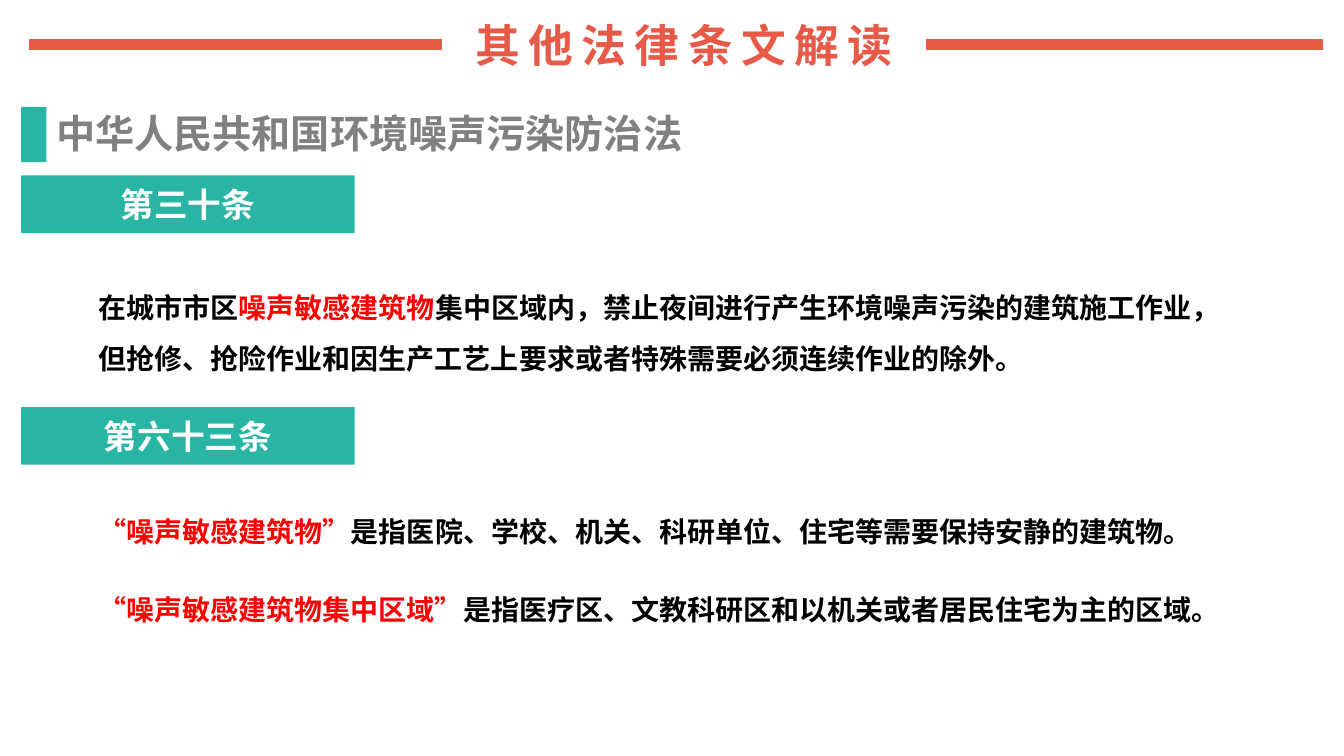
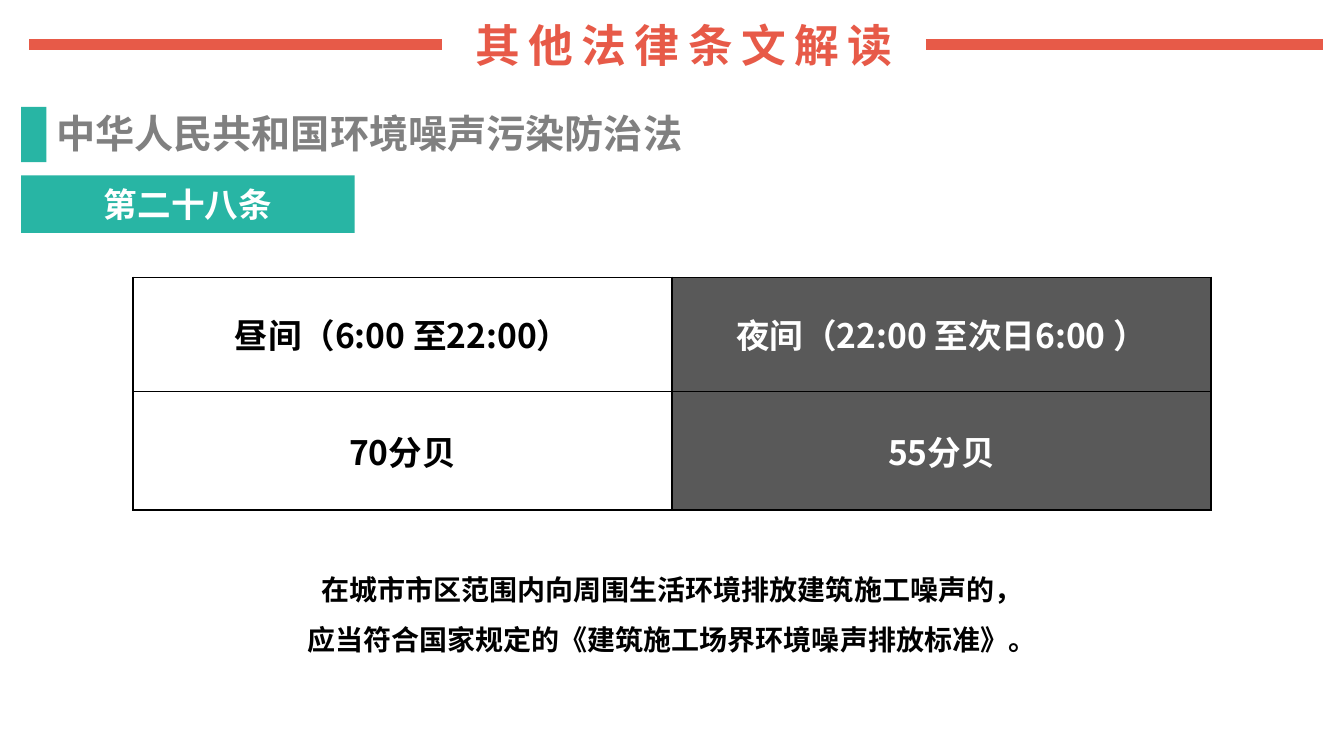
from dataclasses import dataclass

import lxml.etree
import pptx
import pptx.dml.color
import pptx.enum.shapes
import pptx.enum.text
import pptx.oxml.ns
import pptx.util
from pptx.util import Inches

ALIGN = pptx.enum.text.PP_ALIGN
ANCHOR = pptx.enum.text.MSO_ANCHOR


@dataclass(frozen=True)
class Theme:
    font: str = "Noto Sans CJK SC"
    coral: str = "E75A48"
    teal: str = "28B5A4"
    gray: str = "808080"
    dark: str = "595959"
    red: str = "FF0000"
    black: str = "000000"
    white: str = "FFFFFF"
    title: int = 32
    heading: int = 28
    label: int = 24
    body: int = 20
    rule: float = 8.25
    border: float = 1


THEME = Theme()
TITLE = "其他法律条文解读"
LAW = "中华人民共和国环境噪声污染防治法"
LEFT = 0.21
BODY_LEFT = 0.88


def rgb(color):
    return pptx.dml.color.RGBColor.from_string(color)


def sub(parent, tag, **attrs):
    return lxml.etree.SubElement(parent, pptx.oxml.ns.qn(tag), attrs)


# Text
def style_run(r, size, color, spacing=0):
    r.font.name = THEME.font
    r.font.size = pptx.util.Pt(size)
    r.font.bold = True
    r.font.color.rgb = rgb(color)
    rPr = r._r.get_or_add_rPr()
    sub(rPr, "a:ea", typeface=THEME.font)
    if spacing:
        rPr.set("spc", str(spacing * 100))


def fill_text(tf, paragraphs, size, align=ALIGN.LEFT, line_spacing=None, spacing=0):
    """Each paragraph is a list of (text, color) runs."""
    for i, runs in enumerate(paragraphs):
        p = tf.add_paragraph() if i else tf.paragraphs[0]
        p.alignment = align
        p.line_spacing = line_spacing
        for text, color in runs:
            r = p.add_run()
            r.text = text
            style_run(r, size, color, spacing)


def add_text(s, x, y, w, h, paragraphs, size, anchor=ANCHOR.TOP, **options):
    tf = s.shapes.add_textbox(Inches(x), Inches(y), Inches(w), Inches(h)).text_frame
    tf.word_wrap = True
    tf.vertical_anchor = anchor
    fill_text(tf, paragraphs, size, **options)


def add_body(s, x, y, w, h, paragraphs, align=ALIGN.LEFT):
    add_text(s, x, y, w, h, paragraphs, THEME.body, align=align, line_spacing=1.5)


# Shapes
def add_block(s, x, y, w, h):
    sp = s.shapes.add_shape(pptx.enum.shapes.MSO_SHAPE.RECTANGLE,
                            Inches(x), Inches(y), Inches(w), Inches(h))
    sp.shadow.inherit = False
    sp.fill.solid()
    sp.fill.fore_color.rgb = rgb(THEME.teal)
    sp.line.fill.background()
    return sp


def add_article_label(s, y, text):
    tf = add_block(s, LEFT, y, 3.31, 0.57).text_frame
    tf.vertical_anchor = ANCHOR.MIDDLE
    fill_text(tf, [[(text, THEME.white)]], THEME.label, ALIGN.CENTER)


def add_rule(s, x1, x2, y):
    line = s.shapes.add_connector(pptx.enum.shapes.MSO_CONNECTOR.STRAIGHT,
                                  Inches(x1), Inches(y), Inches(x2), Inches(y))
    line.line.color.rgb = rgb(THEME.coral)
    line.line.width = pptx.util.Pt(THEME.rule)
    sub(line._element.spPr, "a:effectLst")


# Table
def style_cell(cell, text, color, fill):
    tcPr = cell._tc.get_or_add_tcPr()
    for side in ("L", "R", "T", "B"):
        ln = sub(tcPr, f"a:ln{side}", w=str(pptx.util.Pt(THEME.border)))
        sub(sub(ln, "a:solidFill"), "a:srgbClr", val=THEME.black)
    cell.fill.solid()
    cell.fill.fore_color.rgb = rgb(fill)
    cell.vertical_anchor = ANCHOR.MIDDLE
    cell.margin_left = cell.margin_right = Inches(0.1)
    cell.margin_top = cell.margin_bottom = Inches(0.02)
    fill_text(cell.text_frame, [[(text, color)]], THEME.label, ALIGN.CENTER)


def add_limits_table(s, x, y, w, heights, rows):
    columns = [(THEME.black, THEME.white), (THEME.white, THEME.dark)]
    table = s.shapes.add_table(len(rows), len(columns), Inches(x), Inches(y),
                               Inches(w), Inches(sum(heights))).table
    table.first_row = table.horz_banding = False
    for i, (height, texts) in enumerate(zip(heights, rows)):
        table.rows[i].height = Inches(height)
        for j, (text, (color, fill)) in enumerate(zip(texts, columns)):
            style_cell(table.cell(i, j), text, color, fill)


# Title band and law heading shared by every slide
def add_law_slide(prs):
    s = prs.slides.add_slide(prs.slide_layouts[6])
    add_text(s, 4.62, 0.12, 5.23, 0.64, [[(TITLE, THEME.coral)]],
             THEME.title, ANCHOR.MIDDLE, spacing=6)
    for x1, x2 in ((0.29, 4.39), (9.19, 13.13)):
        add_rule(s, x1, x2, 0.44)
    add_block(s, LEFT, 1.06, 0.25, 0.55)
    add_text(s, 0.46, 1.04, 6.84, 0.57, [[(LAW, THEME.gray)]], THEME.heading)
    return s


def build_night_work(prs):
    s = add_law_slide(prs)
    add_article_label(s, 1.74, "第三十条")
    add_body(s, BODY_LEFT, 2.67, 11.58, 1.05, [[
        ("在城市市区", THEME.black),
        ("噪声敏感建筑物", THEME.red),
        ("集中区域内，禁止夜间进行产生环境噪声污染的建筑施工作业，"
         "但抢修、抢险作业和因生产工艺上要求或者特殊需要必须连续作业的除外。", THEME.black),
    ]])
    add_article_label(s, 4.04, "第六十三条")
    definitions = [
        ("“噪声敏感建筑物”", "是指医院、学校、机关、科研单位、住宅等需要保持安静的建筑物。"),
        ("“噪声敏感建筑物集中区域”", "是指医疗区、文教科研区和以机关或者居民住宅为主的区域。"),
    ]
    for i, (term, meaning) in enumerate(definitions):
        add_body(s, BODY_LEFT, 4.89 + 0.77 * i, 11.69, 0.55,
                 [[(term, THEME.red), (meaning, THEME.black)]])


def build_noise_limits(prs):
    s = add_law_slide(prs)
    add_article_label(s, 1.74, "第二十八条")
    x, w = 1.32, 10.7
    add_limits_table(s, x, 2.75, w, [1.13, 1.18], [
        ("昼间（6:00 至22:00）", "夜间（22:00 至次日6:00 ）"),
        ("70分贝", "55分贝"),
    ])
    add_body(s, x, 5.46, w, 1.05, [
        [("在城市市区范围内向周围生活环境排放建筑施工噪声的，", THEME.black)],
        [("应当符合国家规定的《建筑施工场界环境噪声排放标准》。", THEME.black)],
    ], ALIGN.CENTER)


def main():
    prs = pptx.Presentation()
    prs.slide_width, prs.slide_height = Inches(13.34), Inches(7.5)
    build_night_work(prs)
    build_noise_limits(prs)
    prs.save("out.pptx")


if __name__ == "__main__":
    main()
